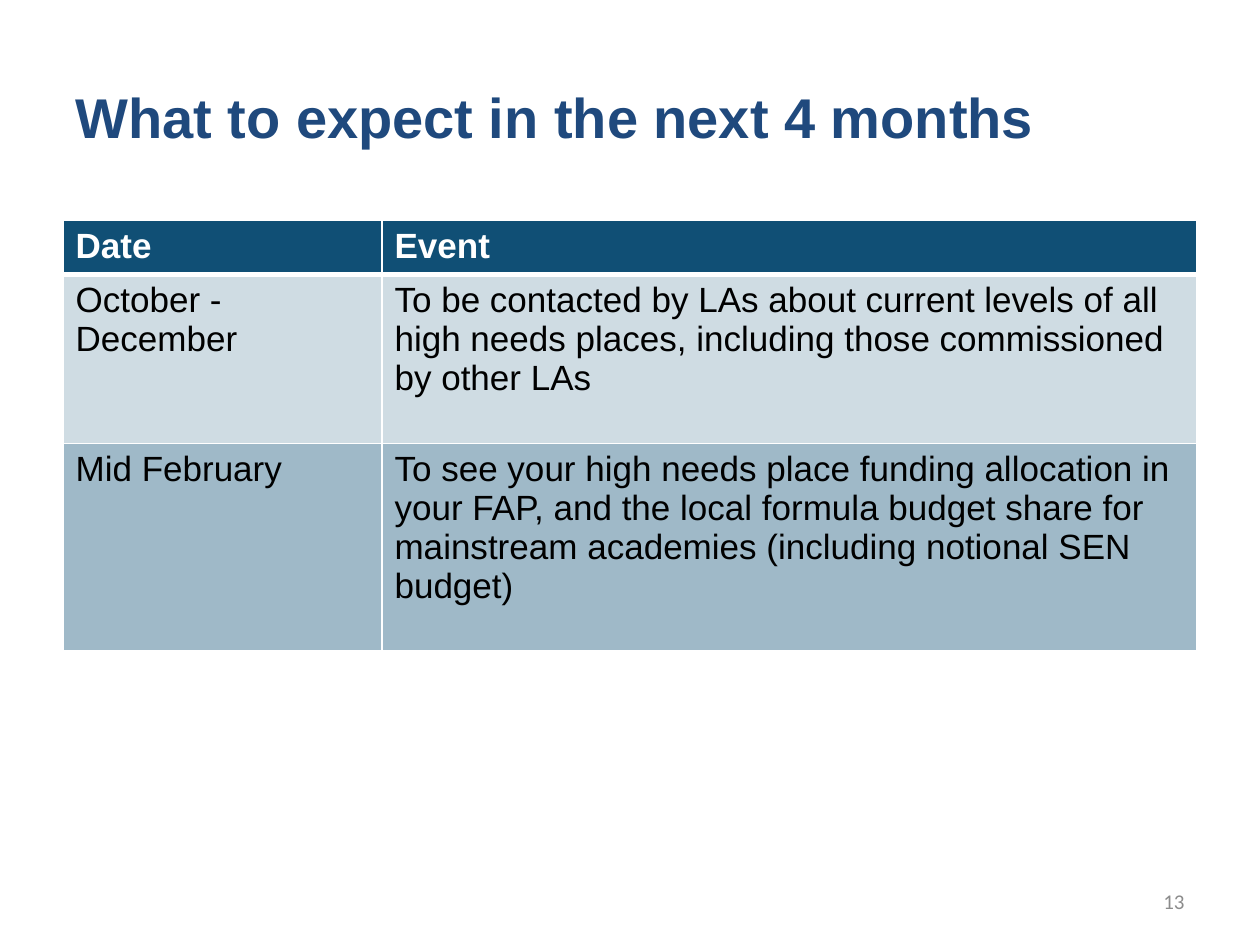
import pptx
import pptx.util
import pptx.dml.color
import pptx.enum.text
import pptx.oxml.ns
import lxml.etree

RGB = pptx.dml.color.RGBColor
ANCHOR = pptx.enum.text.MSO_ANCHOR
ALIGN = pptx.enum.text.PP_ALIGN

NAVY = RGB(0x1F, 0x49, 0x7D)
TEAL = RGB(0x10, 0x4F, 0x75)
PALE = RGB(0xCF, 0xDC, 0xE3)
MID = RGB(0x9F, 0xB9, 0xC8)
GREY = RGB(0x8C, 0x8C, 0x8C)
WHITE = RGB(0xFF, 0xFF, 0xFF)
BLACK = RGB(0, 0, 0)

TITLE = "What to expect in the next 4 months"
PAGE = "13"
ROWS = [
    ("Date", "Event"),
    ("October - December",
     "To be contacted by LAs about current levels of all high needs places, "
     "including those commissioned by other LAs"),
    ("Mid February",
     "To see your high needs place funding allocation in your FAP, and the local "
     "formula budget share for mainstream academies (including notional SEN budget)"),
]
ROW_FILLS = [TEAL, PALE, MID]
ROW_HEIGHTS = [52, 169, 207]
COL_WIDTHS = [319, 815]
TABLE_LEFT, TABLE_TOP = 63, 220


def px(n):
    return pptx.util.Emu(round(n * 914400 / 126))


def add_run(p, text, size, color, bold=False, font="Arial"):
    r = p.add_run()
    r.text = text
    r.font.size = pptx.util.Pt(size)
    r.font.name = font
    r.font.bold = bold
    r.font.color.rgb = color


def add_text(s, box, text, size, color, bold=False, font="Arial", align=ALIGN.LEFT):
    tf = s.shapes.add_textbox(*map(px, box)).text_frame
    tf.word_wrap = True
    tf.vertical_anchor = ANCHOR.MIDDLE
    p = tf.paragraphs[0]
    p.alignment = align
    add_run(p, text, size, color, bold, font)


def set_borders(cell, widths):
    qn = pptx.oxml.ns.qn
    tcPr = cell._tc.get_or_add_tcPr()
    for side, width in widths.items():
        ln = lxml.etree.SubElement(tcPr, qn("a:ln" + side), w=str(pptx.util.Pt(width)))
        fill = lxml.etree.SubElement(ln, qn("a:solidFill"))
        lxml.etree.SubElement(fill, qn("a:srgbClr"), val=str(WHITE))


def add_events_table(s):
    box = (TABLE_LEFT, TABLE_TOP, sum(COL_WIDTHS), sum(ROW_HEIGHTS))
    table = s.shapes.add_table(len(ROWS), len(COL_WIDTHS), *map(px, box)).table
    for column, width in zip(table.columns, COL_WIDTHS):
        column.width = px(width)
    for i, texts in enumerate(ROWS):
        table.rows[i].height = px(ROW_HEIGHTS[i])
        header = i == 0
        widths = {"L": 1, "R": 1, "T": 3 if i == 1 else 1, "B": 3 if header else 1}
        for j, text in enumerate(texts):
            cell = table.cell(i, j)
            set_borders(cell, widths)
            cell.fill.solid()
            cell.fill.fore_color.rgb = ROW_FILLS[i]
            add_run(cell.text_frame.paragraphs[0], text, 20,
                    WHITE if header else BLACK, header)


def main():
    prs = pptx.Presentation()
    prs.slide_width, prs.slide_height = px(1260), px(945)
    s = prs.slides.add_slide(prs.slide_layouts[6])
    add_text(s, (63, 38, 1134, 157), TITLE, 32, NAVY, bold=True)
    add_events_table(s)
    add_text(s, (903, 876, 294, 50), PAGE, 12, GREY, font="Calibri", align=ALIGN.RIGHT)
    prs.save("out.pptx")


if __name__ == "__main__":
    main()
